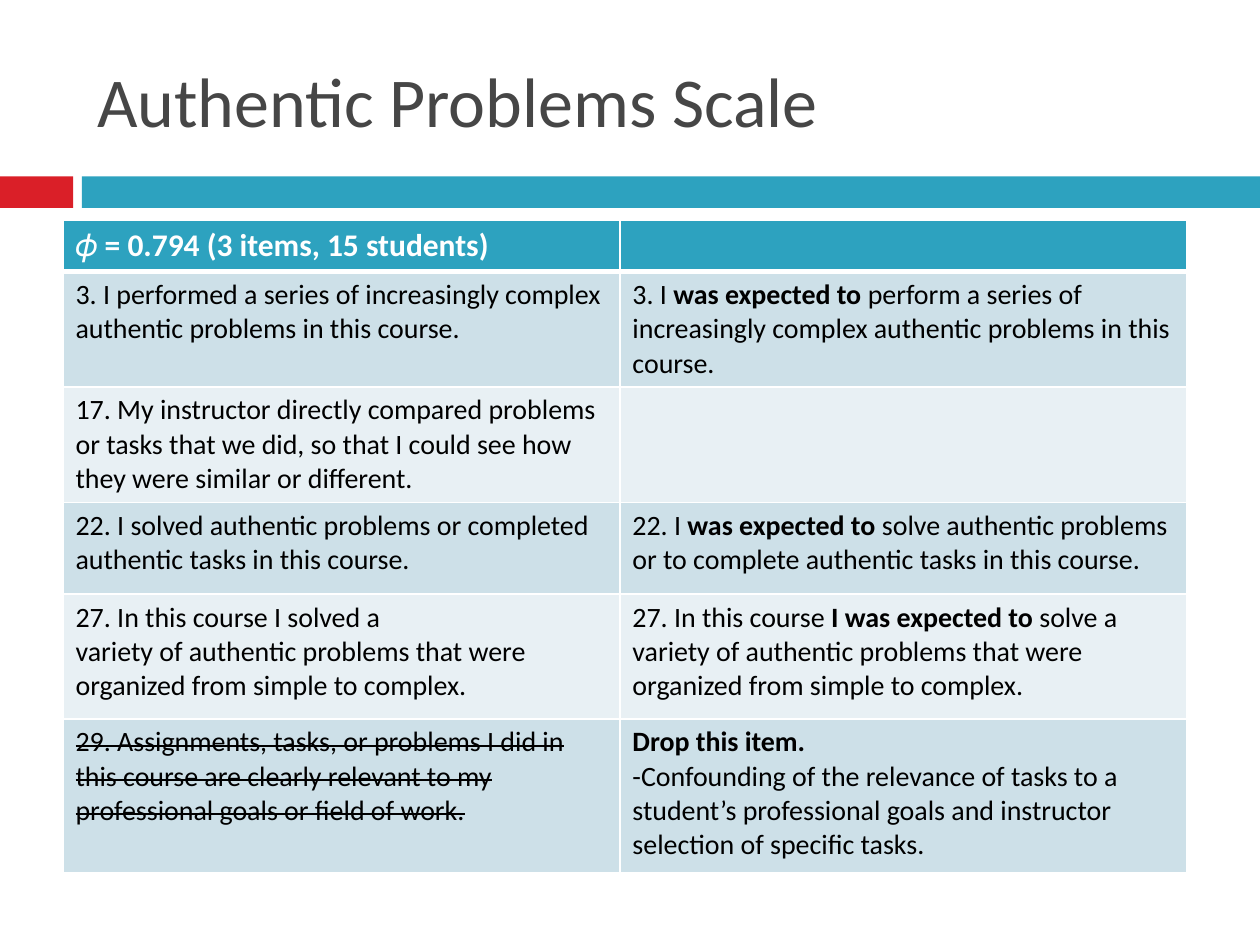
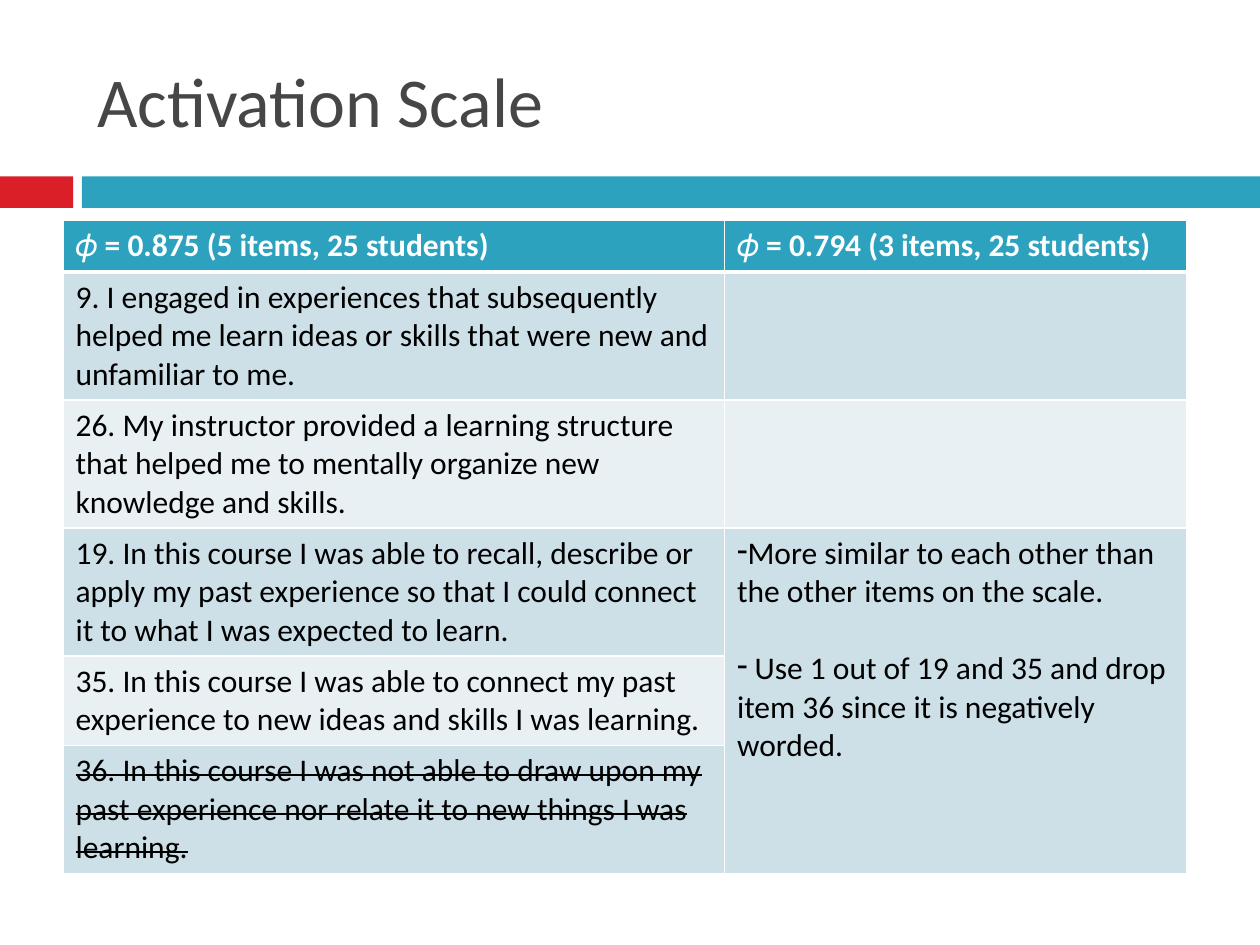
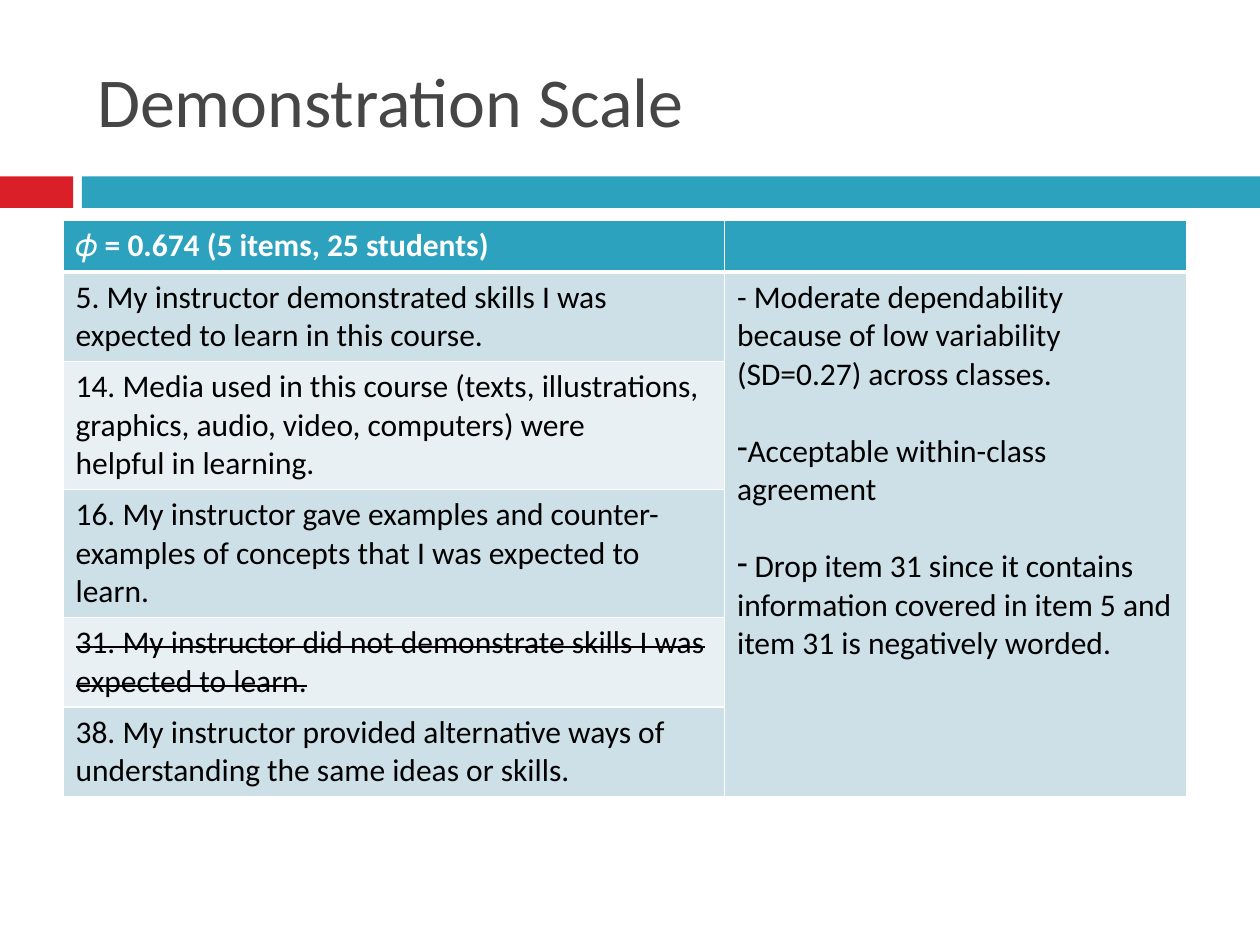
from dataclasses import dataclass
from typing import NamedTuple

from lxml.etree import SubElement
from pptx import Presentation
from pptx.dml.color import RGBColor
from pptx.enum.shapes import MSO_SHAPE
from pptx.enum.text import MSO_ANCHOR, PP_ALIGN
from pptx.oxml.ns import qn
from pptx.util import Inches, Pt

# Shared style
COLORS = {
    "red": "DA1F28",
    "teal": "2DA2BF",
    "title": "464646",
    "white": "FFFFFF",
    "black": "000000",
    "odd_row": "CDE0E8",
    "even_row": "E8F0F4",
}
FONT = "Calibri"
HEADER_SIZE = 18
BLANK_LINE = 22  # points of space that stand for one line
TITLE_ONLY = 5
MARGIN_LEFT, TABLE_TOP = 0.5, 1.75


class Band(NamedTuple):
    left: float
    width: float
    color: str


BANDS = [Band(0, 0.58, "red"), Band(0.65, 9.35, "teal")]


@dataclass
class Span:
    text: str
    bold: bool = False
    strike: bool = False


@dataclass
class Paragraph:
    spans: list[Span]
    dash: bool = False
    space_before: int = 0


@dataclass
class Cell:
    paragraphs: list[Paragraph]
    row_span: int = 1


@dataclass
class ScalePage:
    title: str
    headers: tuple[str, str]
    columns: tuple[float, float]
    row_heights: list[float]
    height: float
    body_size: int
    rows: list[tuple[Cell, Cell]]


def plain(*lines: str) -> Cell:
    return Cell([Paragraph([Span(line)]) for line in lines])


def struck(text: str) -> Cell:
    return Cell([Paragraph([Span(text, strike=True)])])


def reworded(start: str, emphasis: str, end: str) -> Cell:
    return Cell([Paragraph([Span(start), Span(emphasis, bold=True), Span(end)])])


def note(text: str, dash: bool = True, space_before: int = 0) -> Paragraph:
    return Paragraph([Span(text)], dash, space_before)


EMPTY = Cell([])

# Content
PAGES = [
    ScalePage(
        "Authentic Problems Scale",
        ("𝜙 = 0.794 (3 items, 15 students)", ""),
        (4.42, 4.5), [0.31, 0.85, 0.76, 0.73, 0.99, 1.22], 5.13, 16,
        [
            (plain("3. I performed a series of increasingly complex authentic problems in this course."),
             reworded("3. I ", "was expected to ",
                      "perform a series of increasingly complex authentic problems in this course.")),
            (plain("17. My instructor directly compared problems or tasks that we did, "
                   "so that I could see how they were similar or different."), EMPTY),
            (plain("22. I solved authentic problems or completed authentic tasks in this course."),
             reworded("22. I ", "was expected to ",
                      "solve authentic problems or to complete authentic tasks in this course.")),
            (plain("27. In this course I solved a",
                   "variety of authentic problems that were",
                   "organized from simple to complex."),
             reworded("27. In this course", " I was expected to",
                      " solve a variety of authentic problems that were organized from simple to complex.")),
            (struck("29. Assignments, tasks, or problems I did in this course are clearly "
                    "relevant to my professional goals or field of work."),
             Cell([Paragraph([Span("Drop this item.", bold=True)]),
                   note("-Confounding of the relevance of tasks to a student’s professional goals "
                        "and instructor selection of specific tasks.", dash=False)])),
        ],
    ),
    ScalePage(
        "Activation Scale",
        ("𝜙 = 0.875 (5 items, 25 students)", "𝜙 = 0.794 (3 items, 25 students)"),
        (5.25, 3.67), [0.41] * 6, 5.11, 18,
        [
            (plain("9. I engaged in experiences that subsequently helped me learn ideas "
                   "or skills that were new and unfamiliar to me."), EMPTY),
            (plain("26. My instructor provided a learning structure that helped me "
                   "to mentally organize new knowledge and skills."), EMPTY),
            (plain("19. In this course I was able to recall, describe or apply my past experience "
                   "so that I could connect it to what I was expected to learn."),
             Cell([note("More similar to each other than the other items on the scale."),
                   note(" Use 1 out of 19 and 35 and drop item 36 since it is negatively worded.",
                        space_before=BLANK_LINE)], row_span=3)),
            (plain("35. In this course I was able to connect my past experience "
                   "to new ideas and skills I was learning."), EMPTY),
            (struck("36. In this course I was not able to draw upon my past experience "
                    "nor relate it to new things I was learning."), EMPTY),
        ],
    ),
    ScalePage(
        "Demonstration Scale",
        ("𝜙 = 0.674 (5 items, 25 students)", ""),
        (5.25, 3.67), [0.41] * 6, 4.51, 18,
        [
            (plain("5. My instructor demonstrated skills I was expected to learn in this course."),
             Cell([note("- Moderate dependability because of low variability (SD=0.27) across classes.",
                        dash=False),
                   note("Acceptable within-class agreement", space_before=BLANK_LINE),
                   note(" Drop item 31 since it contains information covered in item 5 "
                        "and item 31 is negatively worded.", space_before=BLANK_LINE)], row_span=5)),
            (plain("14. Media used in this course (texts, illustrations, graphics, audio, video, computers) were",
                   "helpful in learning."), EMPTY),
            (plain("16. My instructor gave examples and counter-examples of concepts "
                   "that I was expected to learn."), EMPTY),
            (struck("31. My instructor did not demonstrate skills I was expected to learn."), EMPTY),
            (plain("38. My instructor provided alternative ways of understanding the same ideas or skills."),
             EMPTY),
        ],
    ),
]


def rgb(name: str) -> RGBColor:
    return RGBColor.from_string(COLORS[name])


def format_font(font, size: int, color: str, bold: bool = False) -> None:
    font.name = FONT
    font.size = Pt(size)
    font.bold = bold
    font.color.rgb = rgb(color)


def add_bands(page, layout) -> None:
    """Draw the bands and hand them to the layout, so every slide shows them."""
    for band in BANDS:
        shape = page.shapes.add_shape(
            MSO_SHAPE.RECTANGLE, Inches(band.left), Inches(1.4), Inches(band.width), Inches(0.25))
        shape.shadow.inherit = False
        shape.fill.solid()
        shape.fill.fore_color.rgb = rgb(band.color)
        shape.line.fill.background()
        layout.shapes.element.append(shape.element)


def set_title(page, text: str) -> None:
    title = page.shapes.title
    title.left, title.top = Inches(0.67), Inches(0.25)
    title.width, title.height = Inches(8.92), Inches(1.08)
    frame = title.text_frame
    frame.text = text
    frame.vertical_anchor = MSO_ANCHOR.MIDDLE
    para = frame.paragraphs[0]
    para.alignment = PP_ALIGN.LEFT
    format_font(para.runs[0].font, 40, "title")


def style_cell(cell, row: int) -> None:
    """Set white borders, heavier under the header, and the row's fill."""
    properties = cell._tc.get_or_add_tcPr()
    heavy_side = {0: "lnB", 1: "lnT"}.get(row)
    for side in ("lnL", "lnR", "lnT", "lnB"):
        width = Pt(3 if side == heavy_side else 1)
        line = SubElement(properties, qn(f"a:{side}"), w=str(width))
        fill = SubElement(line, qn("a:solidFill"))
        SubElement(fill, qn("a:srgbClr"), val=COLORS["white"])
    cell.fill.solid()
    cell.fill.fore_color.rgb = rgb("teal" if row == 0 else "odd_row" if row % 2 else "even_row")


def write_cell(cell, content: Cell, size: int, color: str, bold: bool = False) -> None:
    frame = cell.text_frame
    for index, paragraph in enumerate(content.paragraphs):
        para = frame.add_paragraph() if index else frame.paragraphs[0]
        if paragraph.space_before:
            para.space_before = Pt(paragraph.space_before)
        if paragraph.dash:
            properties = para._p.get_or_add_pPr()
            properties.set("marL", "0")
            properties.set("indent", "0")
            SubElement(properties, qn("a:buChar"), char="-")
        for span in paragraph.spans:
            run = para.add_run()
            run.text = span.text
            format_font(run.font, size, color, bold or span.bold)
            if span.strike:
                run._r.get_or_add_rPr().set("strike", "sngStrike")


def add_scale_table(page, scale: ScalePage) -> None:
    frame = page.shapes.add_table(
        len(scale.row_heights), len(scale.columns), Inches(MARGIN_LEFT), Inches(TABLE_TOP),
        Inches(sum(scale.columns)), Inches(scale.height))
    table = frame.table
    table.horz_banding = False
    for column, width in zip(table.columns, scale.columns):
        column.width = Inches(width)
    for row, height in zip(table.rows, scale.row_heights):
        row.height = Inches(height)
    frame.height = Inches(scale.height)

    header_cells = tuple(plain(text) if text else EMPTY for text in scale.headers)
    for row, contents in enumerate([header_cells, *scale.rows]):
        for column, content in enumerate(contents):
            cell = table.cell(row, column)
            style_cell(cell, row)
            if row == 0:
                write_cell(cell, content, HEADER_SIZE, "white", bold=True)
            else:
                write_cell(cell, content, scale.body_size, "black")
            if content.row_span > 1:
                cell.merge(table.cell(row + content.row_span - 1, column))


def main() -> None:
    deck = Presentation()
    deck.slide_width, deck.slide_height = Inches(10), Inches(7.5)
    layout = deck.slide_layouts[TITLE_ONLY]
    for index, scale in enumerate(PAGES):
        page = deck.slides.add_slide(layout)
        if index == 0:
            add_bands(page, layout)
        set_title(page, scale.title)
        add_scale_table(page, scale)
    deck.save("out.pptx")


if __name__ == "__main__":
    main()
